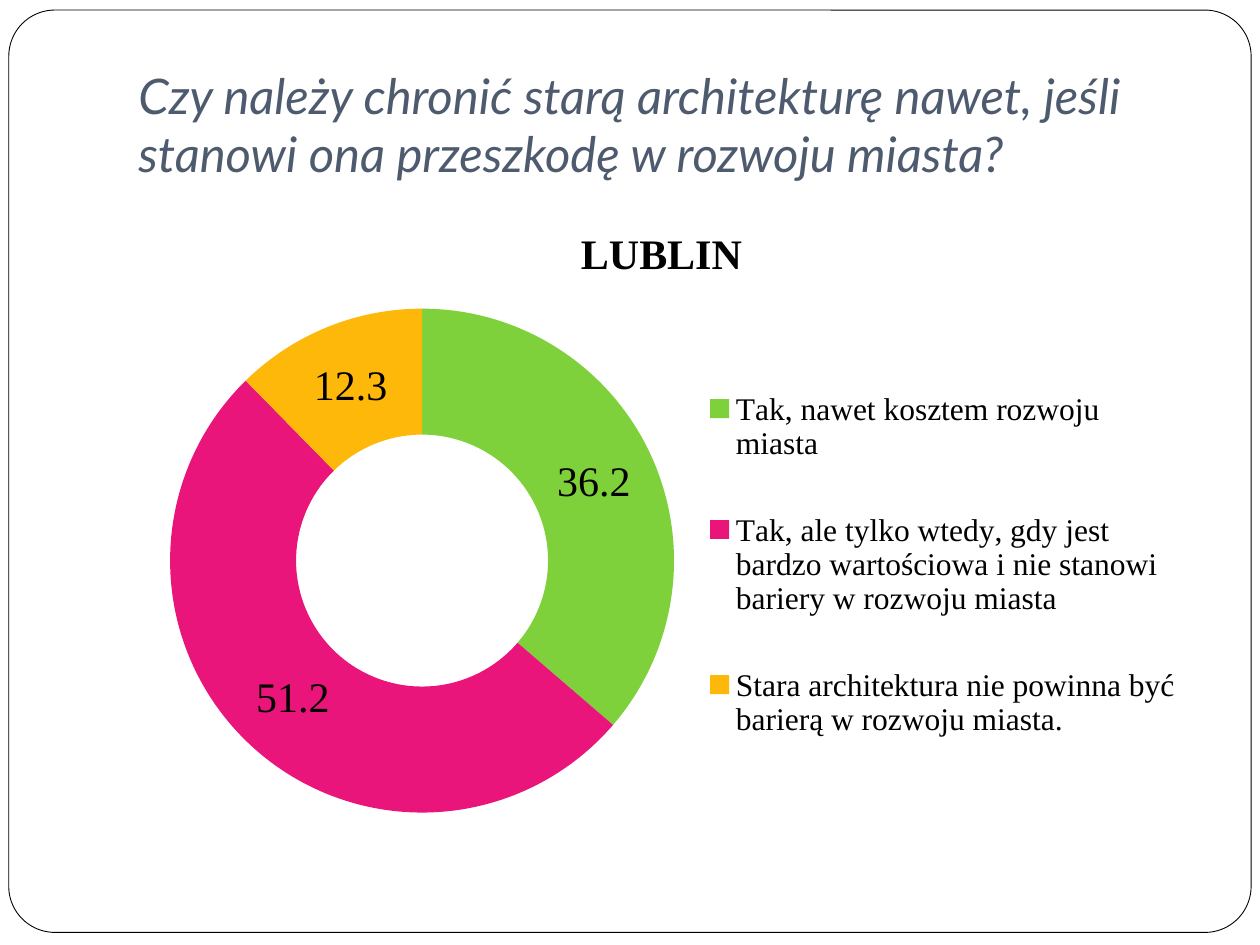
"""Build a survey slide with a doughnut chart of answers from Lublin."""
from dataclasses import dataclass

from lxml.etree import SubElement
from pptx import Presentation
from pptx.chart.chart import Chart
from pptx.chart.data import CategoryChartData
from pptx.dml.color import RGBColor
from pptx.enum.chart import XL_CHART_TYPE, XL_LEGEND_POSITION
from pptx.enum.shapes import MSO_SHAPE
from pptx.enum.text import MSO_ANCHOR
from pptx.oxml.ns import qn
from pptx.slide import Slide
from pptx.util import Inches, Pt


@dataclass(frozen=True)
class Theme:
    paper: str = "FFFFFF"
    ink: str = "000000"
    heading: str = "4E5B6F"
    heading_font: str = "Lato"
    chart_font: str = "Times New Roman"
    heading_size: int = 28
    chart_title_size: int = 24
    label_size: int = 24
    legend_size: int = 18
    base_size: int = 10


@dataclass(frozen=True)
class Answer:
    text: str
    share: float
    color: str


@dataclass(frozen=True)
class Box:
    x: float
    y: float
    w: float
    h: float

    def inches(self) -> tuple:
        return tuple(Inches(v) for v in (self.x, self.y, self.w, self.h))

    def within(self, outer: "Box") -> "Box":
        return Box((self.x - outer.x) / outer.w, (self.y - outer.y) / outer.h,
                   self.w / outer.w, self.h / outer.h)


THEME = Theme()
CITY = "LUBLIN"
QUESTION = ("Czy należy chronić starą architekturę nawet, jeśli "
            "stanowi ona przeszkodę w rozwoju miasta?")
ANSWERS = [
    Answer("Tak, nawet kosztem rozwoju miasta", 36.2, "7FD13B"),
    Answer("Tak, ale tylko wtedy, gdy jest bardzo wartościowa "
           "i nie stanowi bariery w rozwoju miasta", 51.2, "EA157A"),
    Answer("Stara architektura nie powinna być barierą w rozwoju miasta.",
           12.3, "FEB80A"),
]
FRAME = Box(0.07, 0.08, 9.86, 7.32)
HEADING = Box(1, 0.3, 8.5, 1.25)
CHART = Box(1, 1.58, 8.5, 5)
RING = Box(1.35, 2.45, 4, 4)
LEGEND = Box(5.7, 2.7, 3.7, 3.57)


def set_font(font, *, size: int, name: str, color: str,
             bold: bool = False, italic: bool = False) -> None:
    font.size, font.name = Pt(size), name
    font.bold, font.italic = bold, italic
    font.color.rgb = RGBColor.from_string(color)


def add_text(tf, text: str, **fmt) -> None:
    r = tf.paragraphs[0].add_run()
    r.text = text
    set_font(r.font, **fmt)


def add_frame(s: Slide, box: Box) -> None:
    sp = s.shapes.add_shape(MSO_SHAPE.ROUNDED_RECTANGLE, *box.inches())
    sp.adjustments[0] = 0.05
    sp.shadow.inherit = False
    sp.fill.solid()
    sp.fill.fore_color.rgb = RGBColor.from_string(THEME.paper)
    sp.line.color.rgb = RGBColor.from_string(THEME.ink)
    sp.line.width = Pt(0.5)


def add_heading(s: Slide, text: str, box: Box) -> None:
    tf = s.shapes.add_textbox(*box.inches()).text_frame
    tf.word_wrap = True
    tf.vertical_anchor = MSO_ANCHOR.BOTTOM
    tf.margin_bottom = Inches(0.1)
    add_text(tf, text, size=THEME.heading_size, name=THEME.heading_font,
             color=THEME.heading, italic=True)


def place(element, box: Box, inner: bool = False) -> None:
    layout = element.find(qn("c:layout"))
    if layout is None:
        layout = SubElement(element, qn("c:layout"))
        anchor = element.find(qn("c:legendPos"))
        if anchor is not None:
            anchor.addnext(layout)
        else:
            element.insert(0, layout)
    manual = SubElement(layout, qn("c:manualLayout"))
    values = {"layoutTarget": "inner"} if inner else {}
    values |= {"xMode": "edge", "yMode": "edge"}
    values |= {k: f"{getattr(box, k):.3f}" for k in "xywh"}
    for tag, value in values.items():
        SubElement(manual, qn(f"c:{tag}")).set("val", value)


def style_chart(chart: Chart, answers: list[Answer]) -> None:
    fmt = {"name": THEME.chart_font, "color": THEME.ink}
    set_font(chart.font, size=THEME.base_size, **fmt)
    chart.has_title = True
    add_text(chart.chart_title.text_frame, CITY,
             size=THEME.chart_title_size, bold=True, **fmt)
    chart.chart_title.include_in_layout = False

    chart.has_legend = True
    legend = chart.legend
    legend.position = XL_LEGEND_POSITION.RIGHT
    legend.include_in_layout = False
    set_font(legend.font, size=THEME.legend_size, **fmt)

    plot = chart.plots[0]
    plot.vary_by_categories = True
    series = plot.series[0]
    for i, answer in enumerate(answers):
        fill = series.points[i].format.fill
        fill.solid()
        fill.fore_color.rgb = RGBColor.from_string(answer.color)
    labels = series.data_labels
    labels.show_value = True
    labels.show_percentage = False
    set_font(labels.font, size=THEME.label_size, **fmt)

    area = chart.element.find(f".//{qn('c:plotArea')}")
    area.find(f".//{qn('c:holeSize')}").set("val", "50")
    place(area, RING.within(CHART), inner=True)
    place(chart.element.find(f".//{qn('c:legend')}"), LEGEND.within(CHART))


def add_doughnut(s: Slide, answers: list[Answer], box: Box) -> None:
    data = CategoryChartData()
    data.categories = [a.text for a in answers]
    data.add_series(CITY, [a.share for a in answers])
    frame = s.shapes.add_chart(XL_CHART_TYPE.DOUGHNUT, *box.inches(), data)
    style_chart(frame.chart, answers)


def main() -> None:
    prs = Presentation()
    prs.slide_width, prs.slide_height = Inches(10), Inches(7.5)
    s = prs.slides.add_slide(prs.slide_layouts[6])
    add_frame(s, FRAME)
    add_heading(s, QUESTION, HEADING)
    add_doughnut(s, ANSWERS, CHART)
    prs.save("out.pptx")


if __name__ == "__main__":
    main()
